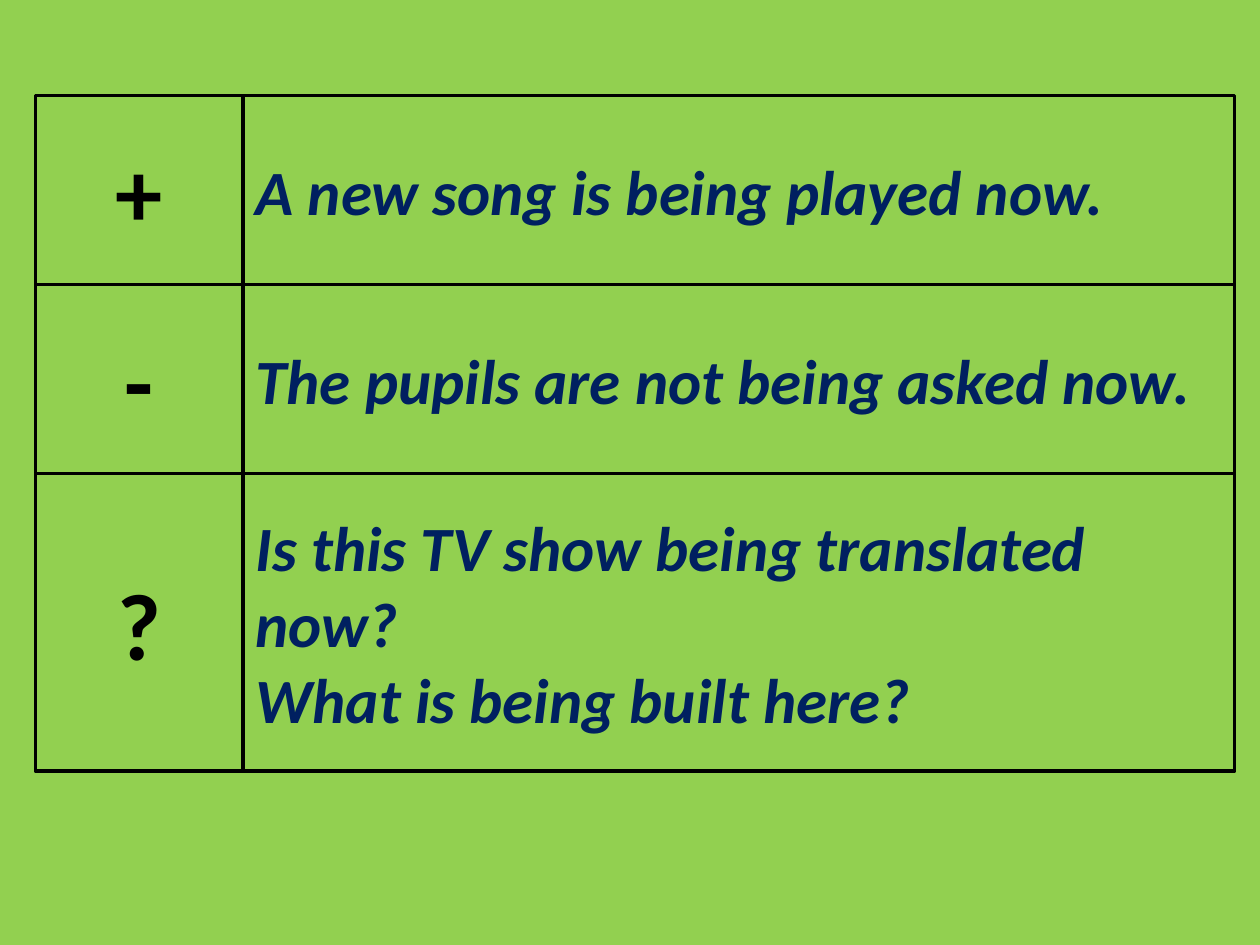
from pptx import Presentation
from pptx.dml.color import RGBColor
from pptx.enum.shapes import MSO_SHAPE
from pptx.enum.text import MSO_ANCHOR, PP_ALIGN
from pptx.util import Inches, Pt

RECT = MSO_SHAPE.RECTANGLE
MIDDLE = MSO_ANCHOR.MIDDLE
LEFT, CENTER = PP_ALIGN.LEFT, PP_ALIGN.CENTER

COLORS = {"back": "92D050", "sign": "000000", "text": "002060", "line": "000000"}
FONT = "Calibri"

# Sign, example sentences, row height
ROWS = [
    ("+", ["A new song is being played now."], 1.5),
    ("-", ["The pupils are not being asked now."], 1.5),
    ("?", ["Is this TV show being translated now?",
           "What is being built here?"], 2.36),
]
X, Y = 0.28, 0.76
SIGN_W, TEXT_W = 1.65, 7.87


def color(name):
    return RGBColor.from_string(COLORS[name])


def write(frame, lines, size, ink, align=LEFT, italic=None):
    frame.word_wrap = True
    frame.vertical_anchor = MIDDLE
    for i, line in enumerate(lines):
        para = frame.add_paragraph() if i else frame.paragraphs[0]
        para.alignment = align
        run = para.add_run()
        run.text = line
        font = run.font
        font.name, font.size = FONT, Pt(size)
        font.bold, font.italic = True, italic
        font.color.rgb = color(ink)


def add_cell(slide, x, y, w, h):
    cell = slide.shapes.add_shape(RECT, Inches(x), Inches(y), Inches(w), Inches(h))
    cell.shadow.inherit = False
    cell.fill.background()
    cell.line.color.rgb = color("line")
    cell.line.width = Pt(2)
    return cell.text_frame


def main():
    deck = Presentation()
    deck.slide_width, deck.slide_height = Inches(10), Inches(7.5)
    slide = deck.slides.add_slide(deck.slide_layouts[6])
    slide.background.fill.solid()
    slide.background.fill.fore_color.rgb = color("back")

    y = Y
    for sign, lines, h in ROWS:
        write(add_cell(slide, X, y, SIGN_W, h), [sign], 54, "sign", align=CENTER)
        write(add_cell(slide, X + SIGN_W, y, TEXT_W, h), lines, 36, "text", italic=True)
        y += h

    deck.save("out.pptx")


if __name__ == "__main__":
    main()
